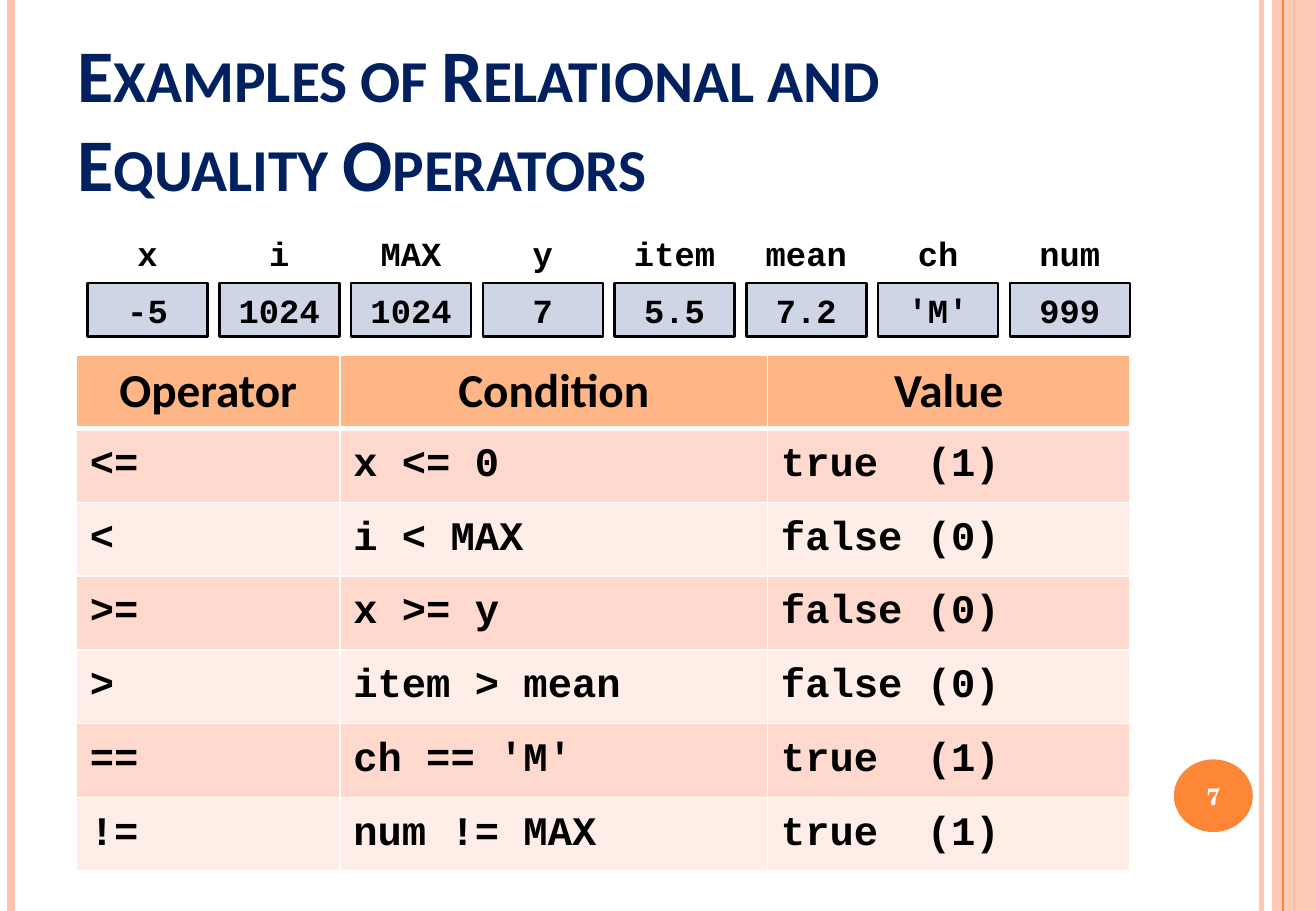
from lxml import etree
from pptx import Presentation
from pptx.dml.color import RGBColor
from pptx.enum import shapes, text
from pptx.oxml.ns import qn
from pptx.util import Cm, Pt

WHITE = RGBColor(0xFF, 0xFF, 0xFF)
BLACK = RGBColor(0, 0, 0)
NAVY = RGBColor(0x00, 0x20, 0x60)
ORANGE = RGBColor(0xFE, 0x86, 0x37)
PEACH = RGBColor(0xFE, 0xC3, 0xAE)
STEEL = RGBColor(0xCE, 0xD6, 0xE6)
HEAD = RGBColor(0xFE, 0xB6, 0x87)
BANDS = RGBColor(0xFF, 0xD9, 0xCE), RGBColor(0xFF, 0xED, 0xE8)

SANS, MONO, SERIF = "Calibri", "Courier New", "TeX Gyre Schola"
WIDE, HIGH = 27.51, 19.05

VARS = [("x", "-5"), ("i", "1024"), ("MAX", "1024"), ("y", "7"),
        ("item", "5.5"), ("mean", "7.2"), ("ch", "'M'"), ("num", "999")]
ROWS = [("Operator", "Condition", "Value"),
        ("<=", "x <= 0", "true  (1)"),
        ("<", "i < MAX", "false (0)"),
        (">=", "x >= y", "false (0)"),
        (">", "item > mean", "false (0)"),
        ("==", "ch == 'M'", "true  (1)"),
        ("!=", "num != MAX", "true  (1)")]


def style(para, name, size, color, align=text.PP_ALIGN.CENTER):
    para.alignment = align
    font = para.font
    font.name, font.size, font.bold = name, Pt(size), True
    font.color.rgb = color


def fade(item, percent):
    color = next(item._element.spPr.iter(qn("a:srgbClr")))
    etree.SubElement(color, qn("a:alpha"), val=str(percent * 1000))


def shape(slide, kind, box, fill, line=None):
    item = slide.shapes.add_shape(kind, *map(Cm, box))
    item.shadow.inherit = False
    item.fill.solid()
    item.fill.fore_color.rgb = fill
    if line is None:
        item.line.fill.background()
    else:
        item.line.color.rgb = line
        item.line.width = Pt(1.5)
    return item


def stripe(slide, x, color, width):
    line = slide.shapes.add_connector(
        shapes.MSO_CONNECTOR.STRAIGHT, Cm(x), 0, Cm(x), Cm(HIGH))
    line.line.color.rgb = color
    line.line.width = Pt(width)
    etree.SubElement(line._element.spPr, qn("a:effectLst"))
    return line


def frame(slide, wide, high):
    # Side stripes and band
    fade(stripe(slide, wide - 1.14, PEACH, 3), 93)
    stripe(slide, 0.23, PEACH, 4.5)
    stripe(slide, wide - 0.46, ORANGE, 1.5)
    band = shape(slide, shapes.MSO_SHAPE.RECTANGLE,
                 (wide - 0.92, 0, 0.92, high), PEACH)
    fade(band, 87)
    stripe(slide, wide - 0.69, ORANGE, 0.75)

    # Page number
    badge = shape(slide, shapes.MSO_SHAPE.OVAL,
                  (wide - 2.97, high - 3.17, 1.65, 1.52), ORANGE)
    body = badge.text_frame
    body.margin_left = body.margin_right = 0
    body.text = "7"
    style(body.paragraphs[0], SERIF, 14, WHITE)


def heading(slide, left, top, wide, high):
    title = slide.shapes.title
    title.left, title.top = Cm(left), Cm(top)
    title.width, title.height = Cm(wide), Cm(high)
    body = title.text_frame
    body.text = "Examples of Relational and \vEquality Operators"
    body.vertical_anchor = text.MSO_ANCHOR.BOTTOM
    body.auto_size = text.MSO_AUTO_SIZE.NONE
    para = body.paragraphs[0]
    style(para, SANS, 44, NAVY, text.PP_ALIGN.LEFT)
    for run in para.runs:
        run._r.get_or_add_rPr().set("cap", "small")


def memory(slide, left, top, wide):
    # Variable names above their values
    cell = 2.51
    step = (wide - cell) / (len(VARS) - 1)
    for n, (name, value) in enumerate(VARS):
        x = left + n * step
        label = shape(slide, shapes.MSO_SHAPE.RECTANGLE,
                      (x, top, cell, 0.84), WHITE)
        label.text_frame.margin_top = label.text_frame.margin_bottom = 0
        store = shape(slide, shapes.MSO_SHAPE.RECTANGLE,
                      (x, top + 1.04, cell, 1.12), STEEL, BLACK)
        for item, word in ((label, name), (store, value)):
            item.text_frame.text = word
            style(item.text_frame.paragraphs[0], MONO, 20, BLACK)


def border(cell, bottom):
    props = cell._tc.get_or_add_tcPr()
    for side, width in (("L", 1), ("R", 1), ("T", 1), ("B", bottom)):
        line = etree.SubElement(props, qn("a:ln" + side), w=str(Pt(width)))
        fill = etree.SubElement(line, qn("a:solidFill"))
        etree.SubElement(fill, qn("a:srgbClr"), val=str(WHITE))


def grid(slide, left, top, wide, high):
    table = slide.shapes.add_table(
        len(ROWS), 3, Cm(left), Cm(top), Cm(wide), Cm(high)).table
    for col, part in zip(table.columns, (0.25, 0.406, 0.344)):
        col.width = Cm(wide * part)
    for r, row in enumerate(ROWS):
        table.rows[r].height = Cm(high / len(ROWS))
        for c, word in enumerate(row):
            cell = table.cell(r, c)
            border(cell, 1 if r else 3)
            cell.fill.solid()
            cell.fill.fore_color.rgb = BANDS[(r - 1) % 2] if r else HEAD
            cell.vertical_anchor = text.MSO_ANCHOR.MIDDLE
            cell.margin_left = cell.margin_right = Cm(0.28)
            cell.text = word
            para = cell.text_frame.paragraphs[0]
            if r:
                style(para, MONO, 24, BLACK, text.PP_ALIGN.LEFT)
            else:
                style(para, SANS, 28, BLACK)


def main():
    deck = Presentation()
    deck.slide_width, deck.slide_height = Cm(WIDE), Cm(HIGH)
    slide = deck.slides.add_slide(deck.slide_layouts[5])
    frame(slide, WIDE, HIGH)
    heading(slide, 1.37, 0.2, 22.48, 4.24)
    memory(slide, 1.83, 4.88, 21.79)
    grid(slide, 1.6, 7.42, 22.02, 10.8)
    deck.save("out.pptx")


if __name__ == "__main__":
    main()
